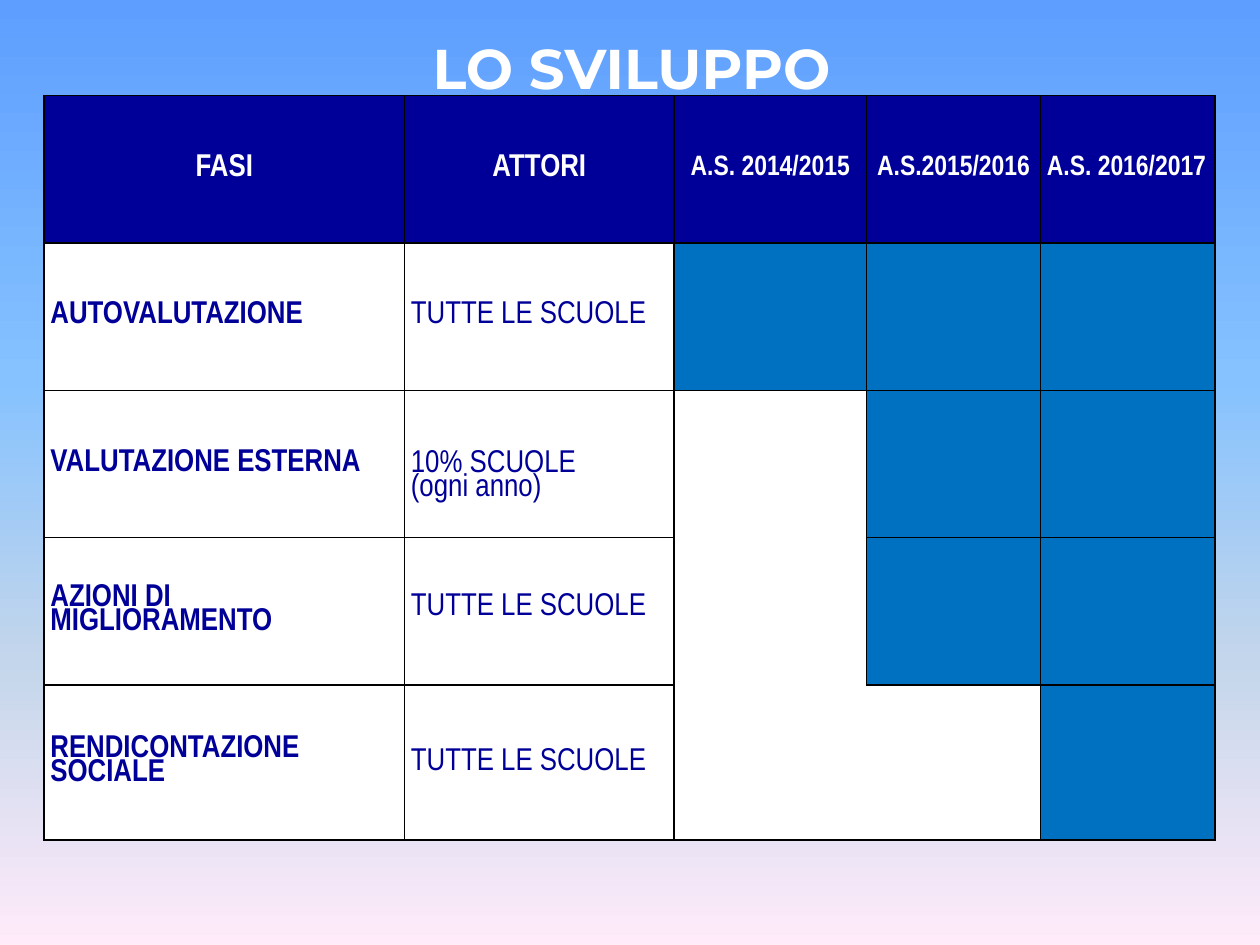
"""Build the LO SVILUPPO slide: a table of phases, actors and school years."""
import pptx
import pptx.dml.color
import pptx.enum.text
import pptx.oxml
import pptx.oxml.ns
import pptx.util

Pt = pptx.util.Pt
ALIGN = pptx.enum.text.PP_ALIGN
ANCHOR = pptx.enum.text.MSO_ANCHOR
NS = pptx.oxml.ns.nsdecls("a")

COLORS = {"navy": "000099", "blue": "0070C0", "white": "FFFFFF", "black": "000000"}
SKY = [(0, "5E9EFF"), (40, "85C2FF"), (70, "C4D6EB"), (100, "FFEBFA")]

HEADING = "LO SVILUPPO "
HEADERS = ["FASI", "ATTORI", "A.S. 2014/2015", "A.S.2015/2016", "A.S. 2016/2017"]
PHASES = [
    ("AUTOVALUTAZIONE", "TUTTE LE SCUOLE", 0, None),
    ("VALUTAZIONE ESTERNA", "10% SCUOLE\n(ogni anno)", 1, 21),
    ("AZIONI DI MIGLIORAMENTO", "TUTTE LE SCUOLE", 1, 37),
    ("RENDICONTAZIONE SOCIALE", "TUTTE LE SCUOLE", 2, 37),
]
COLUMN_WIDTHS = [206, 154, 110, 99.5, 99.5]
ROW_HEIGHTS = [84.2, 84.2, 84.2, 84.2, 88.5]
TABLE_LEFT, TABLE_TOP = 25.2, 54.7
OPEN_SIDES = {(2, 2): "B", (3, 2): "TB", (4, 2): "TR", (4, 3): "L"}
MARGINS = {
    "margin_left": Pt(3.6), "margin_right": Pt(3.6), "margin_top": 0, "margin_bottom": 0,
    "vertical_anchor": ANCHOR.MIDDLE,
}


def rgb(color):
    return pptx.dml.color.RGBColor.from_string(COLORS[color])


def apply(target, formats):
    for attribute, value in formats.items():
        setattr(target, attribute, value)


def paint_background(slide):
    fill = slide.background.fill
    fill.gradient()
    fill.gradient_angle = 270
    stops = slide.background._cSld.find(".//" + pptx.oxml.ns.qn("a:gsLst"))
    for stop in list(stops):
        stops.remove(stop)
    for position, color in SKY:
        stops.append(pptx.oxml.parse_xml(
            f'<a:gs {NS} pos="{position * 1000}"><a:srgbClr val="{color}"/></a:gs>'))


def draw_borders(cell, open_sides):
    properties = cell._tc.get_or_add_tcPr()
    line = f'<a:solidFill><a:srgbClr val="{COLORS["black"]}"/></a:solidFill>'
    for index, side in enumerate("LRTB"):
        paint = "<a:noFill/>" if side in open_sides else line
        properties.insert(index, pptx.oxml.parse_xml(
            f'<a:ln{side} {NS} w="{Pt(1)}">{paint}</a:ln{side}>'))


def write(frame, text, align, spacing, font):
    frame.text = text
    for paragraph in frame.paragraphs:
        apply(paragraph, {"alignment": align, "line_spacing": spacing})
        for run in paragraph.runs:
            apply(run.font, {key: value for key, value in font.items() if key != "color"})
            run.font.color.rgb = rgb(font["color"])


def fill_cell(cell, color, open_sides=""):
    cell.fill.solid()
    cell.fill.fore_color.rgb = rgb(color)
    draw_borders(cell, open_sides)
    apply(cell, MARGINS)


def add_schedule(slide):
    schedule = slide.shapes.add_table(
        len(ROW_HEIGHTS), len(COLUMN_WIDTHS), Pt(TABLE_LEFT), Pt(TABLE_TOP),
        Pt(sum(COLUMN_WIDTHS)), Pt(sum(ROW_HEIGHTS))).table
    apply(schedule, {"first_row": False, "horz_banding": False})
    for column, width in zip(schedule.columns, COLUMN_WIDTHS):
        column.width = Pt(width)
    for row, height in zip(schedule.rows, ROW_HEIGHTS):
        row.height = Pt(height)

    font = {"name": "Arial Narrow", "size": Pt(18), "bold": True}
    for index, header in enumerate(HEADERS):
        cell = schedule.cell(0, index)
        fill_cell(cell, "navy")
        align = ALIGN.LEFT if index == len(HEADERS) - 1 else ALIGN.CENTER
        size = Pt(18 if index < 2 else 16)
        write(cell.text_frame, header, align, 0.8, {**font, "size": size, "color": "white"})

    for row, (phase, actors, first_year, lift) in enumerate(PHASES, 1):
        for column in range(len(HEADERS)):
            active = column >= 2 + first_year
            fill_cell(schedule.cell(row, column), "blue" if active else "white",
                      OPEN_SIDES.get((row, column), ""))
        for column, text in enumerate((phase, actors)):
            write(schedule.cell(row, column).text_frame, text, ALIGN.LEFT, 0.8,
                  {**font, "bold": column == 0, "color": "navy"})
        if lift:
            apply(schedule.cell(row, 1),
                  {"vertical_anchor": ANCHOR.BOTTOM, "margin_bottom": Pt(lift)})


def add_heading(slide):
    heading = slide.shapes.title
    apply(heading, {"left": Pt(70.6), "top": Pt(15.1), "width": Pt(589.7), "height": Pt(46.1)})
    apply(heading.text_frame, {
        "word_wrap": True, "vertical_anchor": ANCHOR.MIDDLE,
        "auto_size": pptx.enum.text.MSO_AUTO_SIZE.SHAPE_TO_FIT_TEXT})
    write(heading.text_frame, HEADING, ALIGN.CENTER, 1.0,
          {"name": "Montserrat", "size": Pt(32), "bold": True, "color": "white"})
    slide.shapes._spTree.append(heading._element)


def main():
    deck = pptx.Presentation()
    apply(deck, {"slide_width": Pt(720), "slide_height": Pt(540)})
    slide = deck.slides.add_slide(deck.slide_layouts[5])
    paint_background(slide)
    add_schedule(slide)
    add_heading(slide)
    deck.save("out.pptx")


if __name__ == "__main__":
    main()
